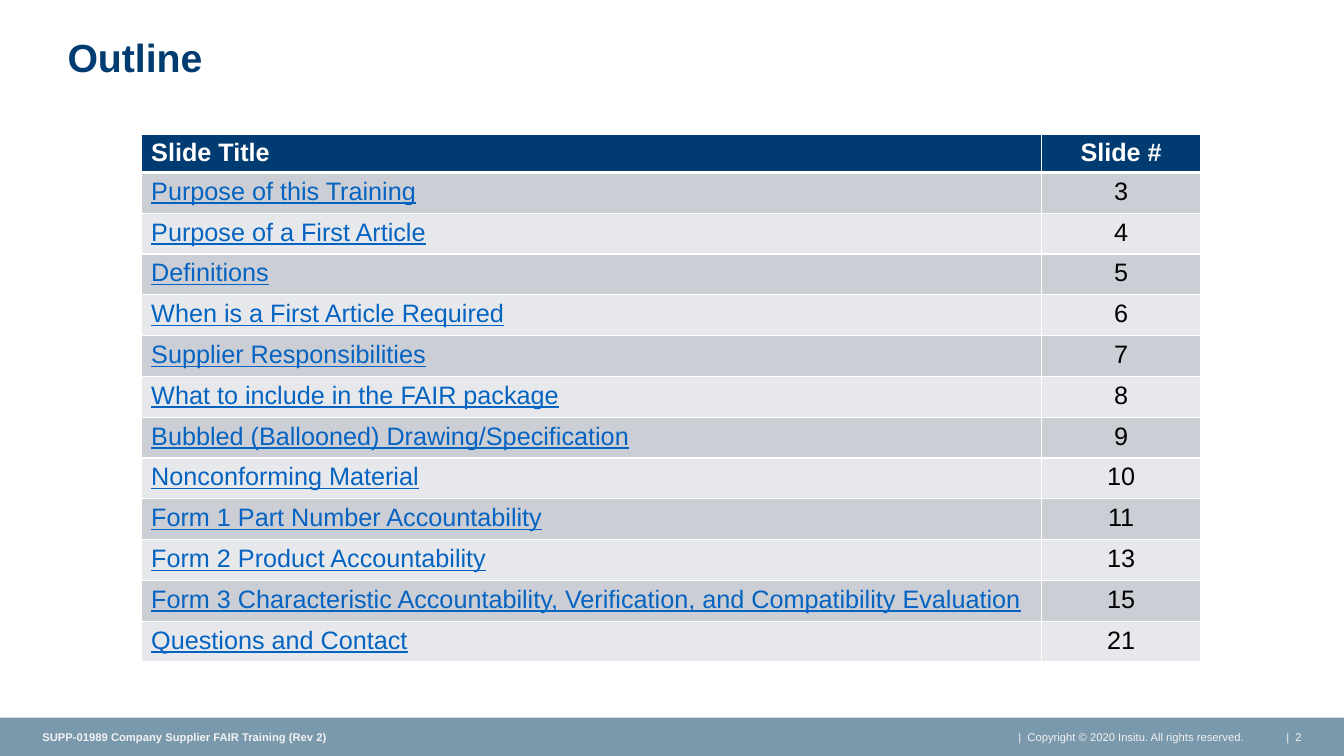
from lxml import etree
from pptx import Presentation
from pptx.dml.color import RGBColor
from pptx.enum.shapes import MSO_SHAPE
from pptx.enum.text import MSO_ANCHOR, PP_ALIGN
from pptx.oxml.ns import qn
from pptx.util import Inches, Pt

RECTANGLE = MSO_SHAPE.RECTANGLE
TOP, MIDDLE = MSO_ANCHOR.TOP, MSO_ANCHOR.MIDDLE
LEFT, CENTER, RIGHT = PP_ALIGN.LEFT, PP_ALIGN.CENTER, PP_ALIGN.RIGHT

NAVY = RGBColor(0x00, 0x3C, 0x71)
STEEL = RGBColor(0x7A, 0x99, 0xAC)
BAND_DARK = RGBColor(0xCC, 0xCE, 0xD5)
BAND_LIGHT = RGBColor(0xE7, 0xE8, 0xEB)
LINK_BLUE = RGBColor(0x05, 0x63, 0xC1)
OFF_WHITE = RGBColor(0xF2, 0xF2, 0xF2)
WHITE = RGBColor(0xFF, 0xFF, 0xFF)
BLACK = RGBColor(0x00, 0x00, 0x00)

HEADER = ("Slide Title", "Slide #")
CONTENTS = [
    ("Purpose of this Training", 3),
    ("Purpose of a First Article", 4),
    ("Definitions", 5),
    ("When is a First Article Required", 6),
    ("Supplier Responsibilities", 7),
    ("What to include in the FAIR package", 8),
    ("Bubbled (Ballooned) Drawing/Specification", 9),
    ("Nonconforming Material", 10),
    ("Form 1 Part Number Accountability", 11),
    ("Form 2 Product Accountability", 13),
    ("Form 3 Characteristic Accountability, Verification, and Compatibility Evaluation", 15),
    ("Questions and Contact", 21),
]
COLUMN_WIDTHS = (8.93, 1.58)
HEADER_HEIGHT = 0.37
TABLE_HEIGHT = 5.23


def write(tf, text, size, color, align=LEFT, **font):
    p = tf.paragraphs[0]
    p.alignment = align
    r = p.add_run()
    r.text = text
    r.font.color.rgb = color
    for name, value in {"name": "Arial", "size": Pt(size), **font}.items():
        setattr(r.font, name, value)
    return p


def add_text(s, box, text, size, color, align=LEFT, anchor=MIDDLE, **font):
    tf = s.shapes.add_textbox(*map(Inches, box)).text_frame
    frame = {"word_wrap": True, "vertical_anchor": anchor, "margin_left": 0,
             "margin_top": 0, "margin_right": 0, "margin_bottom": 0}
    for name, value in frame.items():
        setattr(tf, name, value)
    return write(tf, text, size, color, align, **font)


def add_footer_bar(s):
    bar = s.shapes.add_shape(RECTANGLE, 0, Inches(7.12), Inches(13.33), Inches(0.38))
    bar.shadow.inherit = False
    bar.fill.solid()
    bar.fill.fore_color.rgb = STEEL
    bar.line.fill.background()


def set_borders(cell, top, bottom):
    """Draw white borders; top and bottom widths are in points."""
    tcPr = cell._tc.get_or_add_tcPr()
    widths = {"a:lnL": 1, "a:lnR": 1, "a:lnT": top, "a:lnB": bottom}
    for i, (tag, width) in enumerate(widths.items()):
        ln = etree.Element(qn(tag), w=str(Pt(width)))
        fill = etree.SubElement(ln, qn("a:solidFill"))
        etree.SubElement(fill, qn("a:srgbClr"), val=str(WHITE))
        tcPr.insert(i, ln)


def fill_row(table, row, texts, fill, fonts):
    for col, (text, font) in enumerate(zip(texts, fonts)):
        cell = table.cell(row, col)
        cell.fill.solid()
        cell.fill.fore_color.rgb = fill
        set_borders(cell, top=3 if row == 1 else 1, bottom=3 if row == 0 else 1)
        write(cell.text_frame, str(text), 18, **font)


def add_contents_table(s):
    count = len(CONTENTS)
    table = s.shapes.add_table(
        count + 1, 2, Inches(1.4), Inches(1.33),
        Inches(sum(COLUMN_WIDTHS)), Inches(TABLE_HEIGHT)).table
    for column, width in zip(table.columns, COLUMN_WIDTHS):
        column.width = Inches(width)
    for i, row in enumerate(table.rows):
        row.height = Inches((TABLE_HEIGHT - HEADER_HEIGHT) / count if i else HEADER_HEIGHT)

    heading = {"color": WHITE, "bold": True}
    fill_row(table, 0, HEADER, NAVY, (heading, {**heading, "align": CENTER}))
    body = ({"color": LINK_BLUE, "underline": True, "bold": False},
            {"color": BLACK, "align": CENTER, "bold": False})
    for i, entry in enumerate(CONTENTS, start=1):
        fill_row(table, i, entry, BAND_DARK if i % 2 else BAND_LIGHT, body)


def main():
    prs = Presentation()
    prs.slide_width, prs.slide_height = Inches(13.33), Inches(7.5)
    s = prs.slides.add_slide(prs.slide_layouts[6])

    add_footer_bar(s)
    add_contents_table(s)
    title = add_text(s, (0.67, 0.38, 9.5, 0.75), "Outline", 28, NAVY, anchor=TOP, bold=True)
    title.line_spacing = 0.9
    add_text(s, (10.1, 7.2, 2.24, 0.22),
             "|  Copyright © 2020 Insitu. All rights reserved.", 8, OFF_WHITE, RIGHT)
    add_text(s, (0.42, 7.2, 9.53, 0.22),
             "SUPP-01989 Company Supplier FAIR Training (Rev 2)", 8, OFF_WHITE, bold=True)
    add_text(s, (12.49, 7.2, 0.42, 0.22), "|  2", 8, OFF_WHITE, RIGHT)

    prs.save("out.pptx")


if __name__ == "__main__":
    main()
